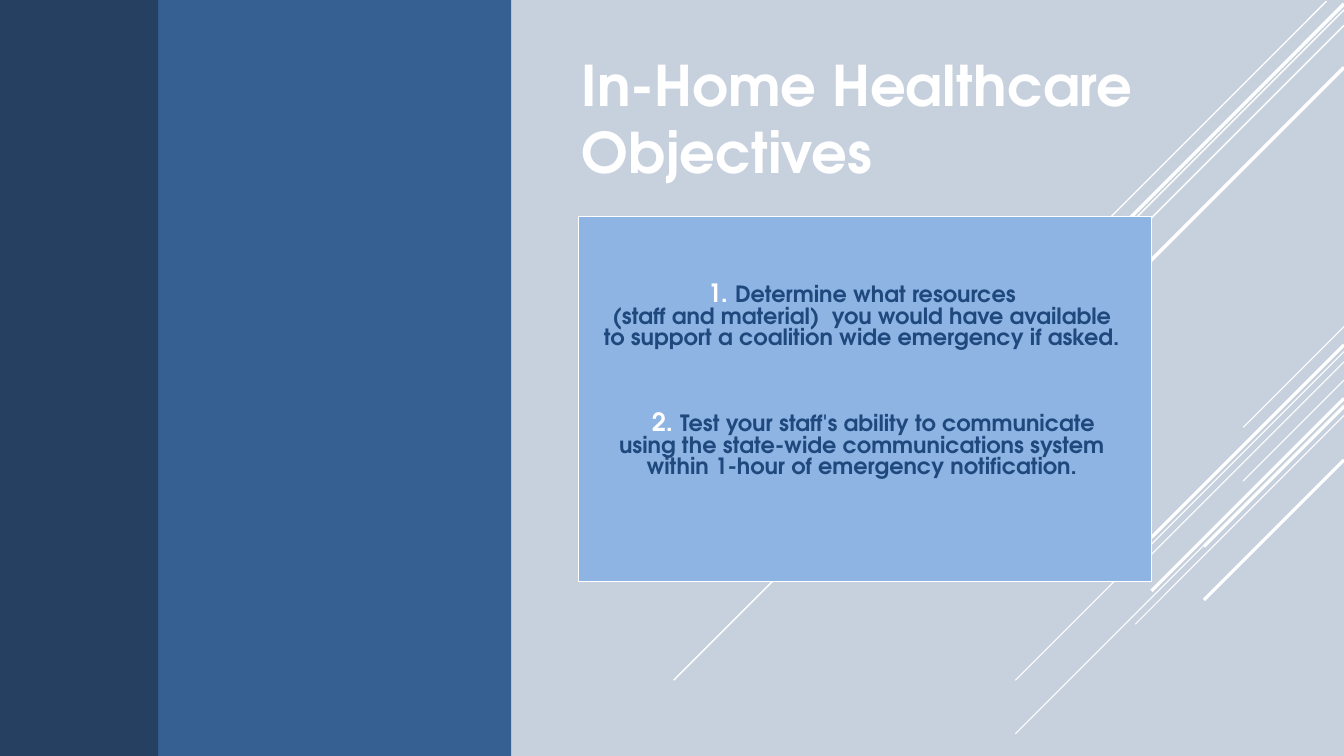
from lxml.etree import SubElement
from pptx import Presentation
from pptx.dml.color import RGBColor
from pptx.enum.shapes import MSO_CONNECTOR, MSO_SHAPE
from pptx.enum.text import MSO_ANCHOR, MSO_AUTO_SIZE, PP_ALIGN
from pptx.oxml import parse_xml
from pptx.oxml.ns import nsdecls, qn
from pptx.util import Cm, Pt

WHITE = RGBColor(0xFF, 0xFF, 0xFF)
PALE_BLUE = RGBColor(0xC7, 0xD1, 0xDE)
MID_BLUE = RGBColor(0x37, 0x60, 0x92)
DARK_BLUE = RGBColor(0x25, 0x40, 0x61)
PANEL_BLUE = RGBColor(0x8E, 0xB4, 0xE3)
TEXT_BLUE = RGBColor(0x1F, 0x49, 0x7D)
FONT = "TeX Gyre Adventor"
WIDTH, HEIGHT = 33.87, 19.05

presentation = Presentation()
presentation.slide_width = Cm(WIDTH)
presentation.slide_height = Cm(HEIGHT)
slide = presentation.slides.add_slide(presentation.slide_layouts[5])
slide.background.fill.solid()
slide.background.fill.fore_color.rgb = PALE_BLUE

# Diagonal lines at 45 degrees: right end, top, run, weight
top_lines = [
    (33.43, 0.03, 10.57, 1),
    (WIDTH, 0.25, 16.89, 1),
    (WIDTH, 0.64, 13.77, 1),
    (WIDTH, 0.1, 13.49, 2.5),
    (WIDTH, 1.7, 12.07, 2.5),
]
cluster = [
    (8.23, 2.54, 0.75),
    (8.86, 8.28, 0.75),
    (9.12, 5.26, 0.75),
    (8.69, 4.85, 2.25),
    (10.24, 3.53, 2.25),
]
cluster_lines = [
    (WIDTH, top + offset, run, weight)
    for offset in (0, 1.35)
    for top, run, weight in cluster
]
for right, top, run, weight in top_lines + cluster_lines:
    line = slide.shapes.add_connector(
        MSO_CONNECTOR.STRAIGHT, Cm(right), Cm(top), Cm(right - run), Cm(top + run))
    line.line.color.rgb = WHITE
    line.line.width = Pt(weight)
    SubElement(line._element.spPr, qn("a:effectLst"))

# Side bands
for width, color in ((12.88, MID_BLUE), (3.99, DARK_BLUE)):
    band = slide.shapes.add_shape(MSO_SHAPE.RECTANGLE, 0, 0, Cm(width), Cm(HEIGHT))
    band.shadow.inherit = False
    band.fill.solid()
    band.fill.fore_color.rgb = color
    band.line.fill.background()

# Title
title = slide.shapes.title
title.left, title.top, title.width, title.height = Cm(14.4), Cm(1.14), Cm(16.87), Cm(3.68)
title_frame = title.text_frame
title_frame.text = "In-Home Healthcare Objectives"
title_frame.word_wrap = True
title_frame.auto_size = MSO_AUTO_SIZE.NONE
title_frame.vertical_anchor = MSO_ANCHOR.TOP
paragraph = title_frame.paragraphs[0]
paragraph.alignment = PP_ALIGN.LEFT
paragraph.font.name = FONT
paragraph.font.size = Pt(40)
paragraph.font.bold = True
paragraph.font.color.rgb = WHITE

# Objectives panel: a one-cell table with a white border
table = slide.shapes.add_table(1, 1, Cm(14.58), Cm(5.46), Cm(14.43), Cm(9.19)).table
cell = table.cell(0, 0)
cell_properties = cell._tc.get_or_add_tcPr()
for side in "LRTB":
    cell_properties.append(parse_xml(
        f'<a:ln{side} w="12700" {nsdecls("a")}><a:solidFill>'
        f'<a:srgbClr val="{WHITE}"/></a:solidFill></a:ln{side}>'))
cell.fill.solid()
cell.fill.fore_color.rgb = PANEL_BLUE
cell.vertical_anchor = MSO_ANCHOR.TOP
cell.margin_left, cell.margin_right = Cm(0.03), Cm(0.18)
cell.margin_top, cell.margin_bottom = Cm(1.74), 0

# Objectives: number, text, space before, left indent
objective_lines = [
    ("1. ", "Determine what resources", 0, 0),
    ("", "(staff and material)  you would have available", 0, 0),
    ("", "to support a coalition wide emergency if asked.", 0, 0),
    ("2. ", "Test your staff's ability to communicate", 47, 0.58),
    ("", "using the state-wide communications system", 0, 0),
    ("", "within 1-hour of emergency notification.", 0, 0),
]
for index, (number, text, space, indent) in enumerate(objective_lines):
    paragraph = cell.text_frame.paragraphs[0] if index == 0 else cell.text_frame.add_paragraph()
    paragraph.alignment = PP_ALIGN.CENTER
    paragraph.line_spacing = Pt(15.2)
    paragraph.space_before = Pt(space)
    paragraph._p.get_or_add_pPr().set("marL", str(Cm(indent)))
    paragraph.font.name = FONT
    paragraph.font.bold = True
    for words, size, color in ((number, 18, WHITE), (text, 16, TEXT_BLUE)):
        if words:
            run = paragraph.add_run()
            run.text = words
            run.font.size = Pt(size)
            run.font.color.rgb = color

presentation.save("out.pptx")
